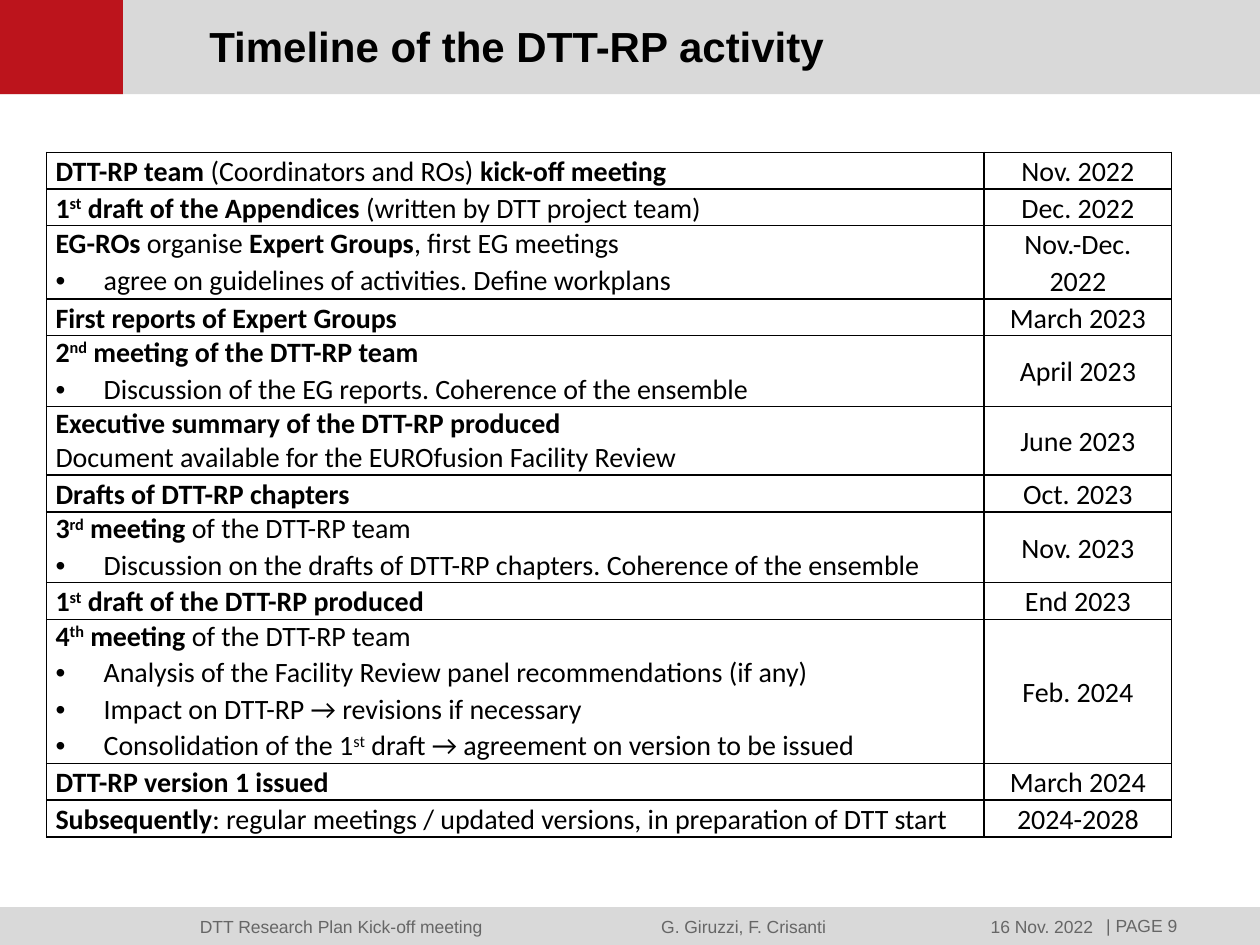
import lxml.etree
import pptx
import pptx.dml.color
import pptx.enum.shapes
import pptx.enum.text
import pptx.oxml.ns
import pptx.util

Cm = pptx.util.Cm
Pt = pptx.util.Pt
RGBColor = pptx.dml.color.RGBColor
ALIGN = pptx.enum.text.PP_ALIGN
MIDDLE = pptx.enum.text.MSO_ANCHOR.MIDDLE
qn = pptx.oxml.ns.qn

BLACK = RGBColor(0x00, 0x00, 0x00)
BAND_GREY = RGBColor(0xD9, 0xD9, 0xD9)
FOOTER_GREY = RGBColor(0x66, 0x66, 0x66)
RED = RGBColor(0xBC, 0x14, 0x1C)

SLIDE_WIDTH, SLIDE_HEIGHT = 25.4, 19.05
LINE_SPACING = 1.07
INDENT = 0.97
COLUMN_WIDTHS = (18.9, 3.78)

# Row height in cm, activity lines, date.
# In the lines, *...* is bold, ^...^ is superscript, a leading > is a bullet.
TIMELINE = [
    (0.74, ["*DTT-RP team* (Coordinators and ROs) *kick-off meeting*"], "Nov. 2022"),
    (0.74, ["*1^st^ draft of the Appendices *(written by DTT project team)"], "Dec. 2022"),
    (1.47, ["*EG-ROs* organise *Expert Groups*, first EG meetings",
            ">agree on guidelines of activities. Define workplans"], "Nov.-Dec. 2022"),
    (0.74, ["*First reports of Expert Groups*"], "March 2023"),
    (1.42, ["*2^nd^ meeting of the DTT-RP team*",
            ">Discussion of the EG reports. Coherence of the ensemble"], "April 2023"),
    (1.37, ["*Executive summary of the DTT-RP produced*",
            "Document available for the EUROfusion Facility Review"], "June 2023"),
    (0.74, ["*Drafts of DTT-RP chapters*"], "Oct. 2023"),
    (1.42, ["*3^rd^ meeting* of the DTT-RP team",
            ">Discussion on the drafts of DTT-RP chapters. Coherence of the ensemble"],
     "Nov. 2023"),
    (0.74, ["*1^st^ draft of the DTT-RP produced*"], "End 2023"),
    (2.9, ["*4^th^ meeting* of the DTT-RP team",
           ">Analysis of the Facility Review panel recommendations (if any)",
           ">Impact on DTT-RP → revisions if necessary",
           ">Consolidation of the 1^st^ draft → agreement on version to be issued"],
     "Feb. 2024"),
    (0.74, ["*DTT-RP version 1 issued*"], "March 2024"),
    (0.74, ["*Subsequently*: regular meetings / updated versions, in preparation of DTT start"],
     "2024-2028"),
]


def format_font(font, name, size, color, bold=False):
    font.name = name
    font.size = Pt(size)
    font.bold = bold
    font.color.rgb = color


def clear_margins(frame):
    frame.margin_left = frame.margin_right = 0
    frame.margin_top = frame.margin_bottom = 0
    frame.vertical_anchor = MIDDLE
    frame.word_wrap = True


def add_band(page, left, top, width, height, color):
    band = page.shapes.add_shape(pptx.enum.shapes.MSO_SHAPE.RECTANGLE,
                                 Cm(left), Cm(top), Cm(width), Cm(height))
    band.shadow.inherit = False
    band.fill.solid()
    band.fill.fore_color.rgb = color
    band.line.fill.background()


def add_header(page, left, top, width, height):
    add_band(page, left, top, width, height, BAND_GREY)
    add_band(page, left - 0.03, top + 0.02, 2.51, height - 0.02, RED)
    title = page.shapes.title
    # Bring the title in front of the bands
    page.shapes._spTree.append(title._element)
    title.left, title.top = Cm(left + 4.22), Cm(top + 0.2)
    title.width, title.height = Cm(18.69), Cm(1.63)
    frame = title.text_frame
    frame.text = "Timeline of the DTT-RP activity"
    clear_margins(frame)
    frame.auto_size = pptx.enum.text.MSO_AUTO_SIZE.NONE
    frame.paragraphs[0].alignment = ALIGN.LEFT
    format_font(frame.paragraphs[0].runs[0].font, "Arial", 24, BLACK, True)


def add_footer_text(page, left, top, width, text, tab_stops=()):
    box = page.shapes.add_textbox(Cm(left), Cm(top), Cm(width), Cm(1.02))
    clear_margins(box.text_frame)
    para = box.text_frame.paragraphs[0]
    para.text = text
    if tab_stops:
        tabs = lxml.etree.SubElement(para._p.get_or_add_pPr(), qn("a:tabLst"))
        for stop in tab_stops:
            lxml.etree.SubElement(tabs, qn("a:tab"), pos=str(Cm(stop)), algn="l")
    format_font(para.runs[0].font, "Arial", 10, FOOTER_GREY)


def add_footer(page, left, top, width, height):
    add_band(page, left, top, width, height, BAND_GREY)
    add_footer_text(page, left + 4.03, top - 0.13, 18.2,
                    "DTT Research Plan Kick-off meeting\tG. Giruzzi, F. Crisanti\t16 Nov. 2022",
                    (9.3, 15.94))
    add_footer_text(page, left + 22.3, top - 0.15, 3.1, "| PAGE 9")


def add_spans(para, markup):
    for bold_index, piece in enumerate(markup.split("*")):
        for raised_index, text in enumerate(piece.split("^")):
            if not text:
                continue
            span = para.add_run()
            span.text = text
            format_font(span.font, "Calibri", 16, BLACK, bold_index % 2 == 1)
            if raised_index % 2:
                span._r.get_or_add_rPr().set("baseline", "30000")


def add_bullet(para):
    properties = para._p.get_or_add_pPr()
    properties.set("marL", str(Cm(INDENT)))
    properties.set("indent", str(-Cm(INDENT)))
    lxml.etree.SubElement(properties, qn("a:buFont"), typeface="Arial")
    lxml.etree.SubElement(properties, qn("a:buChar"), char="•")


def fill_cell(cell, lines, alignment):
    cell.margin_left = cell.margin_right = Cm(0.18)
    cell.margin_top = cell.margin_bottom = 0
    cell.vertical_anchor = MIDDLE
    # Borders come before the fill in the cell properties
    properties = cell._tc.get_or_add_tcPr()
    for side in ("L", "R", "T", "B"):
        border = lxml.etree.SubElement(properties, qn("a:ln" + side), w=str(Pt(1)))
        solid = lxml.etree.SubElement(border, qn("a:solidFill"))
        lxml.etree.SubElement(solid, qn("a:srgbClr"), val=str(BLACK))
    cell.fill.background()

    frame = cell.text_frame
    for index, line in enumerate(lines):
        para = frame.add_paragraph() if index else frame.paragraphs[0]
        bulleted = line.startswith(">")
        if bulleted:
            add_bullet(para)
        para.alignment = alignment
        para.line_spacing = LINE_SPACING if bulleted or len(lines) == 1 else 1.0
        add_spans(para, line.removeprefix(">"))


def add_timeline(page, left, top):
    height = sum(row[0] for row in TIMELINE)
    table = page.shapes.add_table(len(TIMELINE), len(COLUMN_WIDTHS), Cm(left), Cm(top),
                                  Cm(sum(COLUMN_WIDTHS)), Cm(height)).table
    table.first_row = table.horz_banding = False
    for column, width in zip(table.columns, COLUMN_WIDTHS):
        column.width = Cm(width)
    for row, (row_height, activity, date) in zip(table.rows, TIMELINE):
        row.height = Cm(row_height)
        fill_cell(row.cells[0], activity, ALIGN.JUSTIFY if len(activity) > 1 else ALIGN.LEFT)
        fill_cell(row.cells[1], [date], ALIGN.CENTER)


def main():
    deck = pptx.Presentation()
    deck.slide_width, deck.slide_height = Cm(SLIDE_WIDTH), Cm(SLIDE_HEIGHT)
    page = deck.slides.add_slide(deck.slide_layouts[5])
    add_footer(page, 0, 18.29, SLIDE_WIDTH, 0.76)
    add_header(page, 0, -0.1, SLIDE_WIDTH, 2)
    add_timeline(page, 0.94, 3.07)
    deck.save("out.pptx")


if __name__ == "__main__":
    main()
